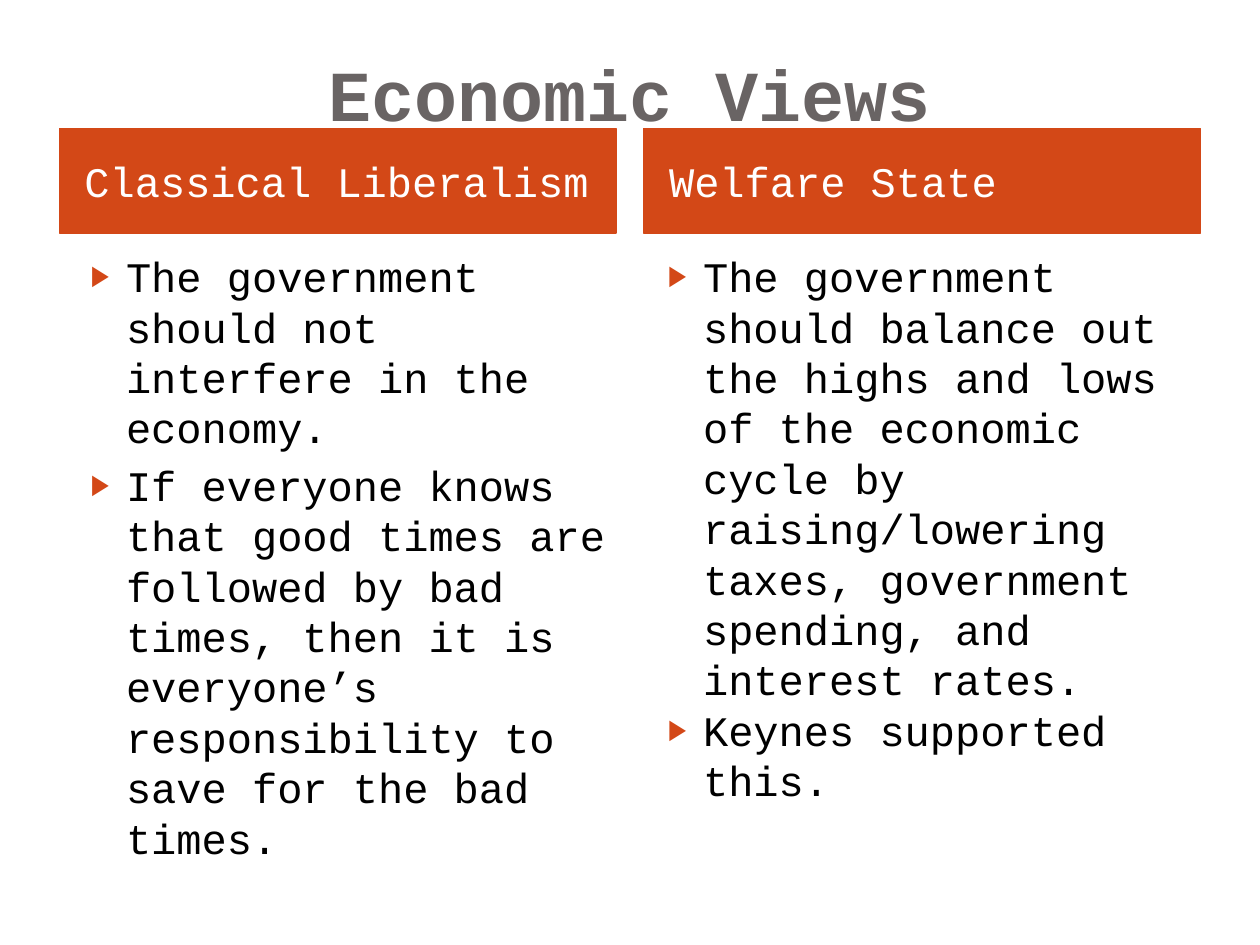
import pptx
import pptx.util
import pptx.dml.color
import pptx.enum.text
import lxml.etree

Pt = pptx.util.Pt
text_enum = pptx.enum.text

# Content: heading, points, left edges of bar and list, gap between points
TITLE = "Economic Views"
SIDES = [
    ("Classical Liberalism",
     ["The government should not interfere in the economy.",
      "If everyone knows that good times are followed by bad times, "
      "then it is everyone’s responsibility to save for the bad times."],
     33.84, 36, 4),
    ("Welfare State",
     ["The government should balance out the highs and lows of the economic "
      "cycle by raising/lowering taxes, government spending, and interest rates.",
      "Keynes supported this."],
     367.92, 365.76, 0),
]
COLORS = {"title": "696464", "bar": "D34817", "head": "FFFFFF", "body": "000000"}
FONTS = {
    "title": {"name": "Courier New", "size": Pt(41), "bold": True},
    "head": {"name": "Courier New", "size": Pt(24), "bold": False},
    "body": {"name": "Courier New", "size": Pt(24), "bold": False},
}
MIDDLE = text_enum.MSO_ANCHOR.MIDDLE
WIDTH = 318.24


def color(key):
    return pptx.dml.color.RGBColor.from_string(COLORS[key])


def apply(target, values):
    for name, value in values.items():
        setattr(target, name, value)


def add_bullet(para):
    props = para._p.get_or_add_pPr()
    props.set("marL", str(Pt(28.8)))
    props.set("indent", str(-Pt(20.16)))
    ns = "{http://schemas.openxmlformats.org/drawingml/2006/main}"
    tint = lxml.etree.SubElement(props, ns + "buClr")
    lxml.etree.SubElement(tint, ns + "srgbClr", val=COLORS["bar"])
    lxml.etree.SubElement(props, ns + "buSzPct", val="68000")
    lxml.etree.SubElement(props, ns + "buChar", char="▶")


def fill_text(shape, box, lines, style, align, anchor, gap=0, bullet=False):
    names = ("left", "top", "width", "height")
    apply(shape, {name: Pt(value) for name, value in zip(names, box)})
    frame = shape.text_frame
    apply(frame, {"text": "\n".join(lines), "word_wrap": True,
                  "auto_size": text_enum.MSO_AUTO_SIZE.NONE,
                  "vertical_anchor": anchor})
    for index, para in enumerate(frame.paragraphs):
        apply(para, {"alignment": align, "space_before": Pt(gap if index else 0)})
        if bullet:
            add_bullet(para)
        apply(para.font, FONTS[style])
        para.font.color.rgb = color(style)


deck = pptx.Presentation()
apply(deck, {"slide_width": Pt(720), "slide_height": Pt(540)})
slide = deck.slides.add_slide(deck.slide_layouts.get_by_name("Comparison"))
holders = slide.placeholders
LEFT = text_enum.PP_ALIGN.LEFT

# Title
fill_text(slide.shapes.title, (36, 21.6, 648, 62.64), [TITLE], "title",
          text_enum.PP_ALIGN.CENTER, MIDDLE)

# One heading bar and one list per side
for side, (head, points, bar_x, list_x, gap) in enumerate(SIDES):
    bar = holders[1 + 2 * side]
    fill_text(bar, (bar_x, 73.44, WIDTH, 59.76), [head], "head", LEFT, MIDDLE)
    bar.text_frame.margin_left = Pt(14.4)
    bar.fill.solid()
    bar.fill.fore_color.rgb = color("bar")
    bar.line.color.rgb = color("bar")
    bar.line.width = Pt(0.75)
    fill_text(holders[2 + 2 * side], (list_x, 139.68, WIDTH, 310.32), points,
              "body", LEFT, text_enum.MSO_ANCHOR.TOP, gap, bullet=True)

deck.save("out.pptx")
